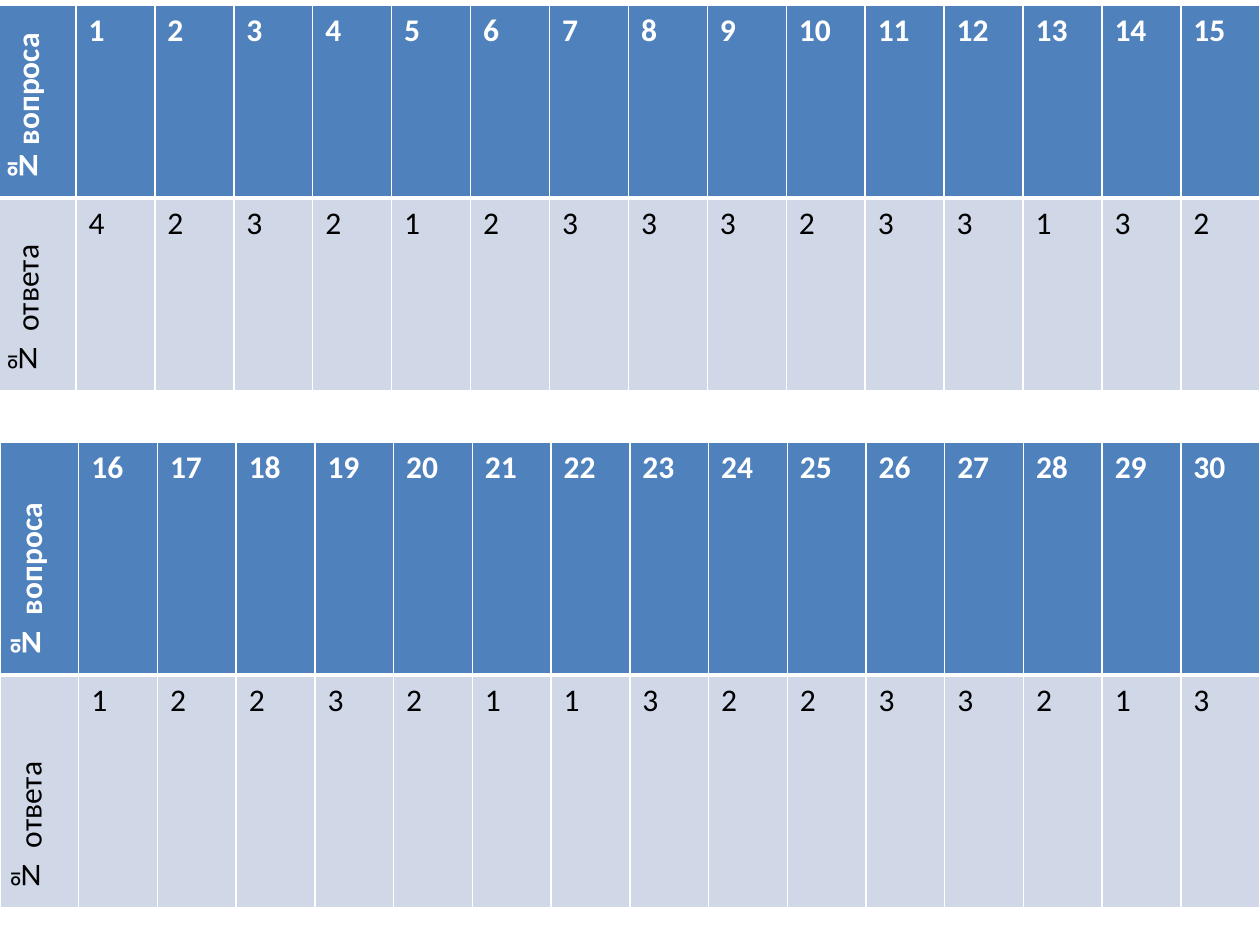
from lxml import etree
from pptx import Presentation
from pptx import util as u
from pptx.dml.color import RGBColor
from pptx.oxml import ns

PX = 914400 / 126
WHITE = RGBColor(0xFF, 0xFF, 0xFF)
BLACK = RGBColor(0x00, 0x00, 0x00)
BLUE = RGBColor(0x4F, 0x81, 0xBD)
PALE = RGBColor(0xD0, 0xD8, 0xE8)


def px(n):
    return u.Emu(round(n * PX))


def write(cell, text, color=BLACK, bold=False, size=18, fill=PALE, top=1, low=1, turn=False):
    """Put formatted text in a cell, with its fill and white borders."""
    run = cell.text_frame.paragraphs[0].add_run()
    run.text = text
    run.font.name = "Calibri"
    run.font.size = u.Pt(size)
    run.font.bold = bold
    run.font.color.rgb = color
    prop = cell._tc.get_or_add_tcPr()
    if turn:
        prop.set("vert", "vert270")
    for side, width in (("L", 1), ("R", 1), ("T", top), ("B", low)):
        line = etree.SubElement(prop, ns.qn("a:ln" + side), w=str(u.Pt(width)))
        solid = etree.SubElement(line, ns.qn("a:solidFill"))
        etree.SubElement(solid, ns.qn("a:srgbClr"), val=str(WHITE))
    cell.fill.solid()
    cell.fill.fore_color.rgb = fill


deck = Presentation()
deck.slide_width, deck.slide_height = px(1260), px(945)
slide = deck.slides.add_slide(deck.slide_layouts[6])

# Left, top, width, row height, question label, first question, answers
grids = [
    (-3, 5, 1263, 193, "№вопроса", 1, "423212333233132"),
    (0, 442, 1260, 233, "№ вопроса", 16, "122321132233213"),
]
head = dict(color=WHITE, bold=True, fill=BLUE, low=3)
body = dict(top=3)

for left, top, width, high, label, first, keys in grids:
    count = len(keys) + 1
    grid = slide.shapes.add_table(2, count, px(left), px(top), px(width), px(2 * high)).table
    for col in grid.columns:
        col.width = px(width / count)
    for row in grid.rows:
        row.height = px(high)

    # Row labels, turned to read upward
    write(grid.cell(0, 0), label, turn=True, **head)
    write(grid.cell(1, 0), "№ ответа", turn=True, **body)

    # Question numbers above their answers
    for i, key in enumerate(keys):
        write(grid.cell(0, i + 1), str(first + i), **head)
        write(grid.cell(1, i + 1), key, **body)

deck.save("out.pptx")
